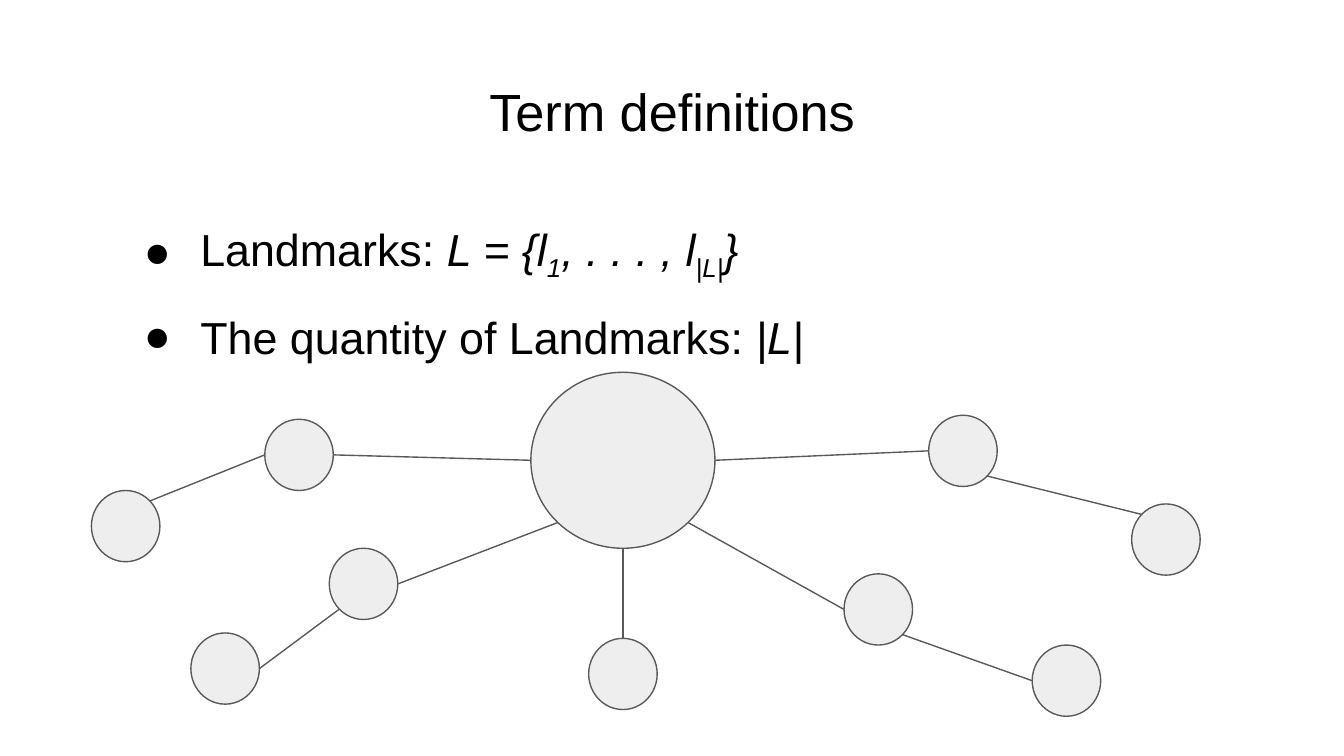
from math import sqrt

from lxml import etree
from pptx import Presentation
from pptx.dml.color import RGBColor
from pptx.enum import shapes, text
from pptx.oxml.ns import qn
from pptx.util import Inches, Pt

# Content: runs are (text, italic, subscript)
TITLE = "Term definitions"
BULLETS = [
    [("Landmarks: ", False, False), ("L = {l", True, False), ("1", True, True),
     (", . . . , l", True, False), ("|L|", True, True), ("}", True, False)],
    [("The quantity of Landmarks: ", False, False), ("|L|", True, False)],
]

# Graph: left and top of each node, in inches
HUB_SIZE, NODE_SIZE = (1.37, 1.31), (0.51, 0.53)
NODES = {
    "hub": (3.95, 2.77),
    "upper left": (1.97, 3.12),
    "lower left": (2.45, 4.08),
    "bottom": (4.38, 4.75),
    "lower right": (6.28, 4.27),
    "upper right": (6.91, 3.09),
    "upper left leaf": (0.68, 3.65),
    "lower left leaf": (1.42, 4.71),
    "upper right leaf": (8.42, 3.75),
    "lower right leaf": (7.68, 4.8),
}
# Each edge: node, its side, other node, its side
EDGES = [
    ("hub", "W", "upper left", "E"),
    ("hub", "SW", "lower left", "E"),
    ("upper left", "W", "upper left leaf", "NE"),
    ("lower left", "SW", "lower left leaf", "E"),
    ("hub", "S", "bottom", "N"),
    ("hub", "SE", "lower right", "W"),
    ("hub", "E", "upper right", "W"),
    ("upper right", "SE", "upper right leaf", "NW"),
    ("lower right", "SE", "lower right leaf", "W"),
]
SIDES = ["N", "NW", "W", "SW", "S", "SE", "E", "NE"]  # an ellipse's connection sites

THEME = {
    "font": "Arial", "title": Pt(28), "body": Pt(24), "line": Pt(0.75),
    "ink": RGBColor(0, 0, 0),
    "fill": RGBColor(0xEE, 0xEE, 0xEE),
    "edge": RGBColor(0x59, 0x59, 0x59),
}


def place(box, left, top, width, height):
    box.left, box.top = Inches(left), Inches(top)
    box.width, box.height = Inches(width), Inches(height)
    frame = box.text_frame
    frame.margin_left = frame.margin_right = Inches(0.1)
    frame.margin_top = frame.margin_bottom = Inches(0.1)
    frame.vertical_anchor = text.MSO_ANCHOR.TOP
    frame.auto_size = text.MSO_AUTO_SIZE.NONE
    frame.word_wrap = True
    return frame


def style(para, size):
    para.font.name, para.font.size = THEME["font"], size
    para.font.color.rgb = THEME["ink"]


def add_bullet(para):
    props = para._p.get_or_add_pPr()
    props.set("marL", str(Inches(0.5)))
    props.set("indent", str(Inches(-0.42)))
    color = etree.Element(qn("a:buClr"))
    etree.SubElement(color, qn("a:srgbClr"), val=str(THEME["ink"]))
    mark = etree.Element(qn("a:buChar"), char="●")
    at = props.index(props.find(qn("a:defRPr")))
    props[at:at] = [color, mark]


def site(node, side):
    """Point of an ellipse's outline that faces the given side."""
    reach = 0.5 / sqrt(len(side))
    across = ("E" in side) - ("W" in side)
    down = ("S" in side) - ("N" in side)
    return (int(node.left + node.width * (0.5 + across * reach)),
            int(node.top + node.height * (0.5 + down * reach)))


# Widescreen page, 16:9
deck = Presentation()
deck.slide_width = Inches(10)
deck.slide_height = deck.slide_width * 9 // 16
page = deck.slides.add_slide(deck.slide_layouts[1])

# Title
para = place(page.shapes.title, 0.34, 0.49, 9.32, 0.63).paragraphs[0]
para.text = TITLE
para.alignment = text.PP_ALIGN.CENTER
style(para, THEME["title"])

# Bullet list
frame = place(page.placeholders[1], 0.89, 1.32, 8.23, 3.74)
for number, runs in enumerate(BULLETS):
    para = frame.add_paragraph() if number else frame.paragraphs[0]
    para.line_spacing, para.space_before = 1.5, Pt(0)
    style(para, THEME["body"])
    add_bullet(para)
    for words, italic, subscript in runs:
        span = para.add_run()
        span.text, span.font.italic = words, italic
        if subscript:
            span.font._element.set("baseline", "-25000")

# Nodes
nodes = {}
for name, corner in NODES.items():
    size = HUB_SIZE if name == "hub" else NODE_SIZE
    node = page.shapes.add_shape(shapes.MSO_SHAPE.OVAL, *map(Inches, corner + size))
    node.shadow.inherit = False
    node.fill.solid()
    node.fill.fore_color.rgb = THEME["fill"]
    node.line.color.rgb, node.line.width = THEME["edge"], THEME["line"]
    nodes[name] = node

# Edges, joined to the ellipses' eight connection sites
for start, start_side, end, end_side in EDGES:
    edge = page.shapes.add_connector(
        shapes.MSO_CONNECTOR.STRAIGHT,
        *site(nodes[start], start_side), *site(nodes[end], end_side))
    edge.line.color.rgb, edge.line.width = THEME["edge"], THEME["line"]
    etree.SubElement(edge._element.spPr, qn("a:effectLst"))
    joints = edge._element.find(".//" + qn("p:cNvCxnSpPr"))
    for tag, name, side in (("a:stCxn", start, start_side), ("a:endCxn", end, end_side)):
        etree.SubElement(joints, qn(tag), id=str(nodes[name].shape_id),
                         idx=str(SIDES.index(side)))

deck.save("out.pptx")
